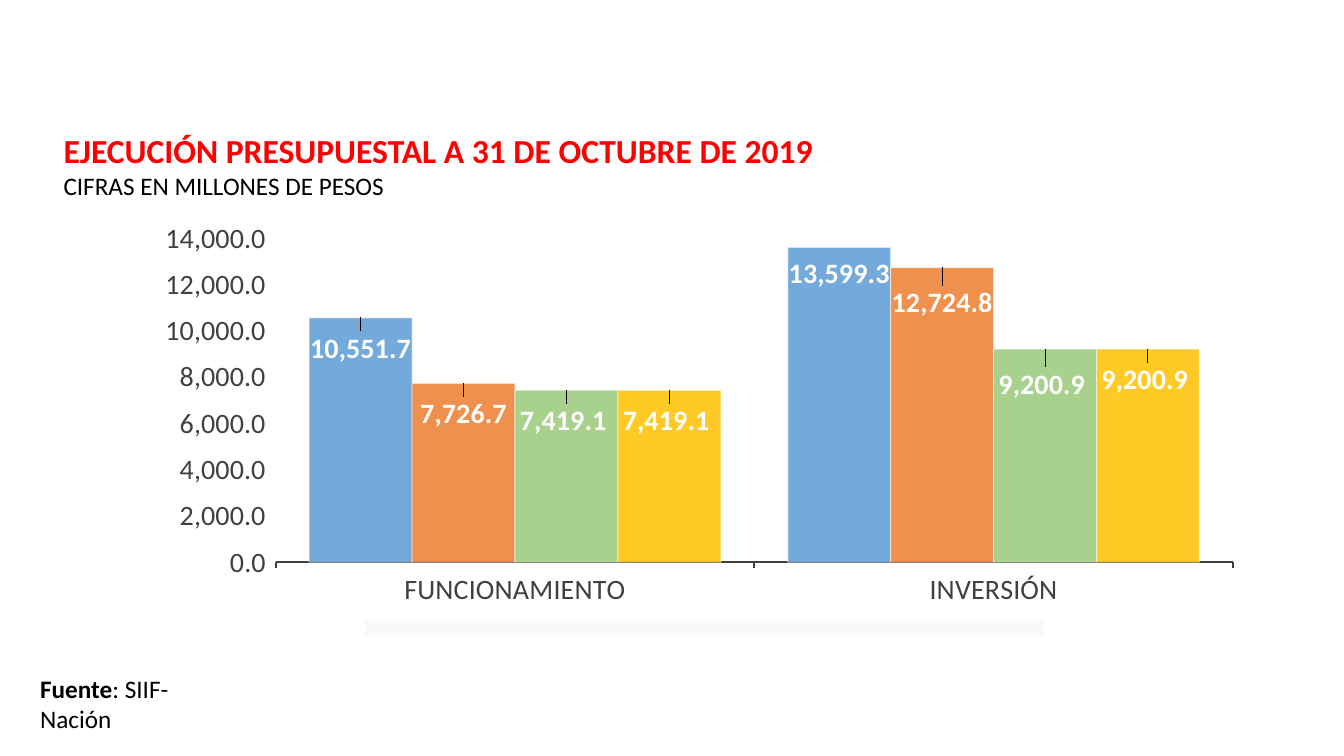
from lxml import etree
from pptx import Presentation
from pptx import util as u
from pptx.chart import data as cd
from pptx.dml.color import RGBColor
from pptx.enum import chart as ec, text
from pptx.oxml import parse_xml
from pptx.oxml.ns import nsdecls, qn


class Theme:
    font = "Calibri"
    red, black, white, gray, pale = "FF0000", "000000", "FFFFFF", "404040", "F2F2F2"
    head, body, chart = 24, 18, 20


PLAIN = "#,##0.0"
SIGNED = r"#,##0.0_ ;[Red]\-#,##0.0\ "
CATS = ["FUNCIONAMIENTO", "INVERSIÓN"]
ROWS = [
    ("APROPIACION", (10551.7, 13599.3), "5B9BD5", 85, PLAIN, ((0, 0.02), (0, 0.01))),
    ("COMPROMISO", (7726.7, 12724.8), "ED7D31", 85, PLAIN, ((0, 0.02), (0, 0.03))),
    ("OBLIGACION", (7419.1, 9200.9), "A9D18E", 100, SIGNED, ((0, 0.02), (0, 0.03))),
    ("PAGO", (7419.1, 9200.9), "FFC000", 85, SIGNED, ((0, 0.02), (0, 0.02))),
]


def style(font, size, color, bold=False):
    font.name, font.size, font.bold = Theme.font, u.Pt(size), bold
    font.color.rgb = RGBColor.from_string(color)


def fade(fill, color, alpha):
    fill.solid()
    fill.fore_color.rgb = RGBColor.from_string(color)
    if alpha < 100:
        node = fill._xPr.find(".//" + qn("a:srgbClr"))
        etree.SubElement(node, qn("a:alpha")).set("val", str(alpha * 1000))


def layout(inner="", **parts):
    tags = "".join(f'<c:{key} val="{val}"/>' for key, val in parts.items())
    return parse_xml(f"<c:layout {nsdecls('c')}><c:manualLayout>{inner}{tags}"
                     "</c:manualLayout></c:layout>")


class Deck:
    def __init__(self):
        self.prs = Presentation()
        self.prs.slide_width, self.prs.slide_height = u.Inches(13.33), u.Inches(7.5)
        self.slide = self.prs.slides.add_slide(self.prs.slide_layouts[5])

    def place(self, shape, box):
        shape.left, shape.top, shape.width, shape.height = map(u.Inches, box)
        frame = shape.text_frame
        frame.word_wrap = True
        frame.auto_size = text.MSO_AUTO_SIZE.SHAPE_TO_FIT_TEXT
        frame.vertical_anchor = text.MSO_ANCHOR.TOP
        return frame

    def title(self, box, head, sub):
        frame = self.place(self.slide.shapes.title, box)
        frame.text = f"{head}\n{sub}"
        looks = ((Theme.head, Theme.red, True), (Theme.body, Theme.black, False))
        for para, look in zip(frame.paragraphs, looks):
            para.alignment = text.PP_ALIGN.LEFT
            style(para.runs[0].font, *look)

    def note(self, box, label, rest):
        frame = self.place(self.slide.shapes.add_textbox(*map(u.Inches, box)), box)
        para = frame.paragraphs[0]
        para.text = label
        para.add_run().text = rest
        for run, bold in zip(para.runs, (True, False)):
            style(run.font, Theme.body, Theme.black, bold)

    def label(self, point, form, shift):
        tag = point.data_label
        style(tag.font, Theme.chart, Theme.white, True)
        tag.position = ec.XL_LABEL_POSITION.INSIDE_END
        node = tag._dLbl
        node.insert(1, layout(x=shift[0], y=shift[1]))
        num = parse_xml(f"<c:numFmt {nsdecls('c')}/>")
        num.set("formatCode", form)
        num.set("sourceLinked", "0")
        node.insert(2, num)

    def bars(self, box):
        data = cd.CategoryChartData(number_format=PLAIN)
        data.categories = CATS
        for name, vals, *_ in ROWS:
            data.add_series(name, vals)
        chart = self.slide.shapes.add_chart(
            ec.XL_CHART_TYPE.COLUMN_CLUSTERED, *map(u.Inches, box), data).chart
        style(chart.font, Theme.chart, Theme.black)
        chart.has_title = False
        plot = chart.plots[0]
        plot.vary_by_categories, plot.gap_width, plot.overlap = False, 65, 0
        for series, (_, vals, color, alpha, form, shifts) in zip(plot.series, ROWS):
            fade(series.format.fill, color, alpha)
            line = series.format.line
            line.width = u.Pt(0.75)
            fade(line.fill, Theme.white, 50)
            for i, shift in enumerate(shifts):
                self.label(series.points[i], form, shift)
        self.axes(chart)
        self.legend(chart)
        area = chart._chartSpace.find(".//" + qn("c:plotArea"))
        for old in area.findall(qn("c:layout")):
            area.remove(old)
        inner = '<c:layoutTarget val="inner"/><c:xMode val="edge"/><c:yMode val="edge"/>'
        area.insert(0, layout(inner, x=0.12, y=0.06, w=0.86, h=0.71))

    def axes(self, chart):
        cat, val = chart.category_axis, chart.value_axis
        for axis in (cat, val):
            axis.has_major_gridlines = False
            axis.major_tick_mark = ec.XL_TICK_MARK.OUTSIDE
            style(axis.tick_labels.font, Theme.chart, Theme.gray)
        cat.format.line.color.rgb = RGBColor.from_string(Theme.gray)
        cat.format.line.width = u.Pt(1.5)
        val.format.line.fill.background()
        val.minimum_scale, val.maximum_scale, val.major_unit = 0, 14000, 2000
        val.tick_labels.number_format = PLAIN
        val.tick_labels.number_format_is_linked = False

    def legend(self, chart):
        chart.has_legend = True
        key = chart.legend
        key.position = ec.XL_LEGEND_POSITION.BOTTOM
        key.include_in_layout = False
        style(key.font, Theme.chart, Theme.gray)
        node = key._element
        for old in node.findall(qn("c:layout")):
            node.remove(old)
        inner = '<c:xMode val="edge"/><c:yMode val="edge"/>'
        node.find(qn("c:legendPos")).addnext(
            layout(inner, x=0.2, y=0.9, w=0.61, h=0.035))
        fill = parse_xml(f"<c:spPr {nsdecls('c', 'a')}><a:solidFill>"
                         f'<a:srgbClr val="{Theme.pale}"><a:alpha val="39000"/></a:srgbClr>'
                         "</a:solidFill><a:ln><a:noFill/></a:ln></c:spPr>")
        node.find(qn("c:txPr")).addprevious(fill)

    def save(self):
        self.prs.save("out.pptx")


def main():
    deck = Deck()
    deck.note((0.3, 6.63, 2.22, 0.4), "Fuente", ": SIIF- Nación")
    deck.title((0.53, 1.24, 11.04, 0.81),
               "EJECUCIÓN PRESUPUESTAL A 31 DE OCTUBRE DE 2019",
               "CIFRAS EN MILLONES DE PESOS")
    deck.bars((1.41, 2.09, 11.04, 4.53))
    deck.save()


if __name__ == "__main__":
    main()
